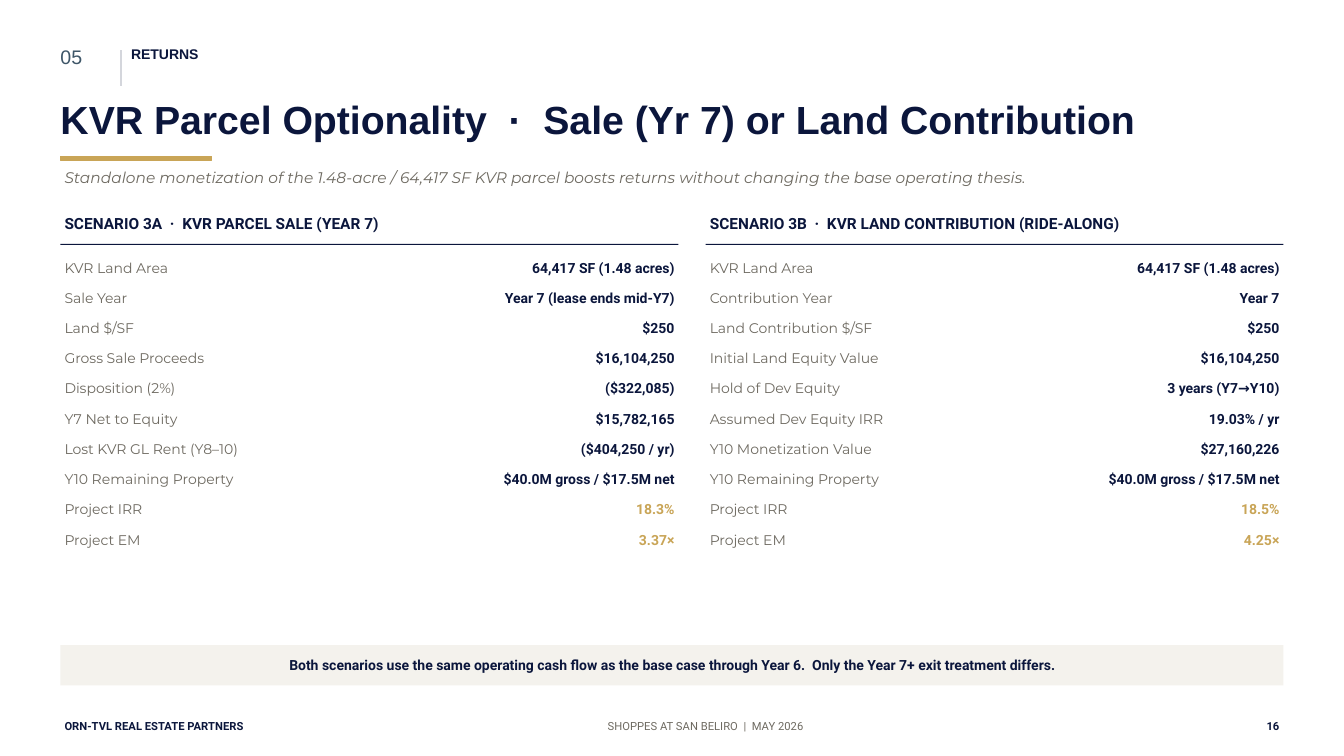
from dataclasses import dataclass
from typing import Optional

from lxml import etree
from pptx import Presentation
from pptx import util as u
from pptx.dml.color import RGBColor
from pptx.enum import shapes, text
from pptx.oxml.ns import qn

PX = 9144
NAVY, GOLD, GREY = "0B163C", "C9A557", "6E6A61"
SLATE, SILVER, IVORY = "3E5668", "D4D6DC", "F4F2ED"
HEADING, LABEL, FIGURE = "Arial", "Montserrat", "Roboto"
LEFT, WIDTH = 60, 1213
LABEL_WIDTH, ROWS_TOP, ROW_STEP = 300, 255, 30
ALIGN = text.PP_ALIGN


@dataclass
class Row:
    """A label and its value within a scenario."""
    label: str
    value: str
    color: str = NAVY


@dataclass
class Scenario:
    """A headed column of rows."""
    heading: str
    left: int
    width: int
    rows: list[Row]


SCENARIOS = [
    Scenario("SCENARIO 3A  ·  KVR PARCEL SALE (YEAR 7)", LEFT, 613, [
        Row("KVR Land Area", "64,417 SF (1.48 acres)"),
        Row("Sale Year", "Year 7 (lease ends mid-Y7)"),
        Row("Land $/SF", "$250"),
        Row("Gross Sale Proceeds", "$16,104,250"),
        Row("Disposition (2%)", "($322,085)"),
        Row("Y7 Net to Equity", "$15,782,165"),
        Row("Lost KVR GL Rent (Y8–10)", "($404,250 / yr)"),
        Row("Y10 Remaining Property", "$40.0M gross / $17.5M net"),
        Row("Project IRR", "18.3%", GOLD),
        Row("Project EM", "3.37×", GOLD),
    ]),
    Scenario("SCENARIO 3B  ·  KVR LAND CONTRIBUTION (RIDE-ALONG)", 700, 573, [
        Row("KVR Land Area", "64,417 SF (1.48 acres)"),
        Row("Contribution Year", "Year 7"),
        Row("Land Contribution $/SF", "$250"),
        Row("Initial Land Equity Value", "$16,104,250"),
        Row("Hold of Dev Equity", "3 years (Y7→Y10)"),
        Row("Assumed Dev Equity IRR", "19.03% / yr"),
        Row("Y10 Monetization Value", "$27,160,226"),
        Row("Y10 Remaining Property", "$40.0M gross / $17.5M net"),
        Row("Project IRR", "18.5%", GOLD),
        Row("Project EM", "4.25×", GOLD),
    ]),
]


def px(*lengths: int) -> list[u.Emu]:
    """Turn px lengths into EMU."""
    return [u.Emu(length * PX) for length in lengths]


def rgb(color: str) -> RGBColor:
    """Turn a hex string into a colour."""
    return RGBColor.from_string(color)


def write(shape, words: str, *, size: int, font: str, color: str = NAVY,
          bold: bool = False, italic: bool = False, align=ALIGN.LEFT,
          anchor=text.MSO_ANCHOR.TOP, inset: tuple[int, int] = (4, 2)) -> None:
    """Fill a shape with formatted text."""
    frame = shape.text_frame
    frame.word_wrap = True
    frame.auto_size = text.MSO_AUTO_SIZE.NONE
    frame.vertical_anchor = anchor
    frame.margin_left, frame.margin_top = px(*inset)
    frame.margin_right, frame.margin_bottom = px(*inset)
    paragraph = frame.paragraphs[0]
    paragraph.alignment = align
    run = paragraph.add_run()
    run.text = words
    run.font.size, run.font.name = u.Pt(size), font
    run.font.bold, run.font.italic = bold, italic
    run.font.color.rgb = rgb(color)


def add_text(slide, box: tuple[int, int, int, int], words: str, **style) -> None:
    """Add a text box at a px position."""
    write(slide.shapes.add_textbox(*px(*box)), words, **style)


def add_bar(slide, box: tuple[int, int, int, int], color: str,
            outline: Optional[float] = None):
    """Add a filled rectangle, outlined in its own colour if asked."""
    bar = slide.shapes.add_shape(shapes.MSO_SHAPE.RECTANGLE, *px(*box))
    bar.shadow.inherit = False
    bar.fill.solid()
    bar.fill.fore_color.rgb = rgb(color)
    if outline is None:
        bar.line.fill.background()
    else:
        bar.line.color.rgb = rgb(color)
        bar.line.width = u.Pt(outline)
    return bar


def add_header(slide) -> None:
    """Draw the section marker, title and subtitle."""
    add_text(slide, (LEFT, 45, 70, 45), "05", size=14, font=HEADING,
             color=SLATE, inset=(0, 0))
    divider = slide.shapes.add_connector(shapes.MSO_CONNECTOR.STRAIGHT,
                                         *px(120, 50, 120, 85))
    divider.line.color.rgb = rgb(SILVER)
    divider.line.width = u.Pt(1.5)
    etree.SubElement(divider._element.spPr, qn("a:effectLst"))
    add_text(slide, (130, 45, 800, 40), "RETURNS", size=10, font=HEADING,
             bold=True, inset=(0, 0))
    title = slide.shapes.title
    title.left, title.top, title.width, title.height = px(LEFT, 95, WIDTH, 55)
    write(title, "KVR Parcel Optionality  ·  Sale (Yr 7) or Land Contribution",
          size=28, font=HEADING, bold=True, inset=(0, 0))
    add_bar(slide, (LEFT, 155, 150, 4), GOLD, outline=0.5)
    add_text(slide, (LEFT, 165, WIDTH, 40),
             "Standalone monetization of the 1.48-acre / 64,417 SF KVR parcel "
             "boosts returns without changing the base operating thesis.",
             size=11, font=LABEL, color=GREY, italic=True)


def add_scenario(slide, scenario: Scenario) -> None:
    """Draw a scenario's heading, rule and rows."""
    left, width = scenario.left, scenario.width
    add_text(slide, (left, 210, 600, 32), scenario.heading,
             size=11, font=FIGURE, bold=True)
    add_bar(slide, (left, 242, width, 1), NAVY)
    for index, row in enumerate(scenario.rows):
        top = ROWS_TOP + index * ROW_STEP
        add_text(slide, (left, top, LABEL_WIDTH, ROW_STEP), row.label,
                 size=10, font=LABEL, color=GREY)
        add_text(slide, (left + LABEL_WIDTH, top, width - LABEL_WIDTH, ROW_STEP),
                 row.value, size=10, font=FIGURE, color=row.color, bold=True,
                 align=ALIGN.RIGHT)


def add_footer(slide) -> None:
    """Draw the takeaway band and the footer."""
    takeaway = add_bar(slide, (LEFT, 640, WIDTH, 40), IVORY)
    write(takeaway,
          "Both scenarios use the same operating cash flow as the base case "
          "through Year 6.  Only the Year 7+ exit treatment differs.",
          size=10, font=FIGURE, bold=True, align=ALIGN.CENTER,
          anchor=text.MSO_ANCHOR.MIDDLE)
    add_text(slide, (LEFT, 712, 500, 30), "ORN-TVL REAL ESTATE PARTNERS",
             size=8, font=FIGURE, bold=True)
    add_text(slide, (500, 712, 400, 30), "SHOPPES AT SAN BELIRO  |  MAY 2026",
             size=8, font=FIGURE, color=GREY, align=ALIGN.CENTER)
    add_text(slide, (1173, 712, 100, 30), "16", size=8, font=FIGURE,
             bold=True, align=ALIGN.RIGHT)


def main() -> None:
    """Build and save the slide."""
    deck = Presentation()
    deck.slide_width, deck.slide_height = px(1333, 750)
    slide = deck.slides.add_slide(deck.slide_layouts.get_by_name("Title Only"))
    add_header(slide)
    for scenario in SCENARIOS:
        add_scenario(slide, scenario)
    add_footer(slide)
    deck.save("out.pptx")


if __name__ == "__main__":
    main()
